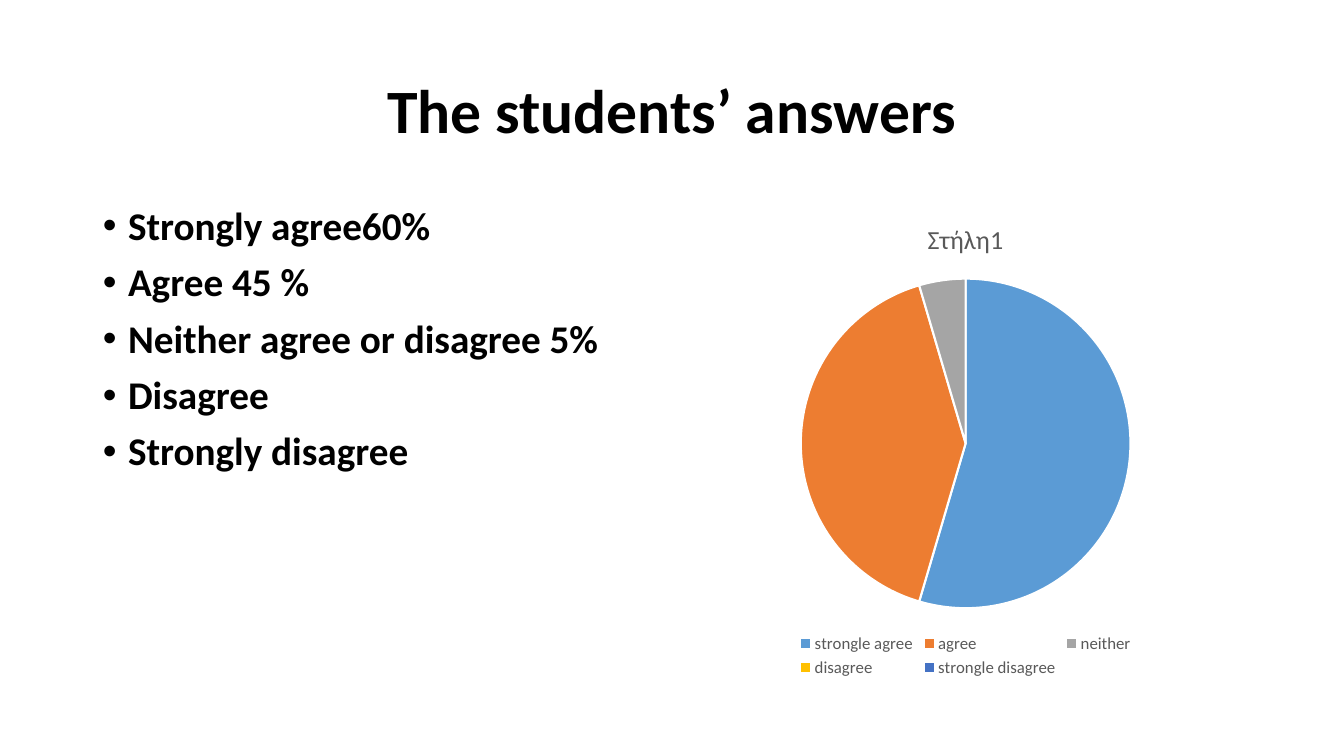
from lxml import etree
from pptx import Presentation
from pptx.chart.data import CategoryChartData
from pptx.dml.color import RGBColor
from pptx.enum.chart import XL_CHART_TYPE, XL_LEGEND_POSITION
from pptx.enum.text import MSO_ANCHOR, MSO_AUTO_SIZE, PP_ALIGN
from pptx.oxml.ns import qn
from pptx.util import Inches, Pt

PIE = XL_CHART_TYPE.PIE
BOTTOM = XL_LEGEND_POSITION.BOTTOM
MIDDLE, TOP = MSO_ANCHOR.MIDDLE, MSO_ANCHOR.TOP
NO_FIT = MSO_AUTO_SIZE.NONE
CENTER, LEFT = PP_ALIGN.CENTER, PP_ALIGN.LEFT

BLACK = RGBColor(0x00, 0x00, 0x00)
WHITE = RGBColor(0xFF, 0xFF, 0xFF)
GRAY = RGBColor(0x59, 0x59, 0x59)
SLICE_COLORS = [
    RGBColor(0x5B, 0x9B, 0xD5),
    RGBColor(0xED, 0x7D, 0x31),
    RGBColor(0xA5, 0xA5, 0xA5),
    RGBColor(0xFF, 0xC0, 0x00),
    RGBColor(0x44, 0x72, 0xC4),
]

ANSWERS = [
    "Strongly agree60%",
    "Agree 45 %",
    "Neither agree or disagree 5%",
    "Disagree",
    "Strongly disagree",
]
SHARES = {
    "strongle agree": 60,
    "agree": 45,
    "neither": 5,
    "disagree": None,
    "strongle disagree": None,
}


class AnswerSlide:
    font = "Calibri"
    margin = 0.92
    gap = 0.16
    indent = Inches(0.25)

    def __init__(self, prs):
        self.slide = prs.slides.add_slide(prs.slide_layouts[1])
        self.column = (prs.slide_width / Inches(1) - 2 * self.margin - self.gap) / 2

    def box(self, col, top, span, height):
        left = self.margin + col * (self.column + self.gap)
        width = span * self.column + (span - 1) * self.gap
        return [Inches(v) for v in (left, top, width, height)]

    def style(self, font, size, color, bold):
        font.name = self.font
        font.size = Pt(size)
        font.bold = bold
        font.color.rgb = color

    def fill_placeholder(self, sp, box, lines, size, align, anchor):
        sp.left, sp.top, sp.width, sp.height = box
        tf = sp.text_frame
        tf.text = "\n".join(lines)
        tf.word_wrap = True
        tf.auto_size = NO_FIT
        tf.vertical_anchor = anchor
        for i, p in enumerate(tf.paragraphs):
            p.alignment = align
            p.line_spacing = 0.9
            p.space_before = Pt(10 if i else 0)
            for r in p.runs:
                self.style(r.font, size, BLACK, True)
        return tf

    def title(self, text, box):
        self.fill_placeholder(self.slide.shapes.title, box, [text], 44, CENTER, MIDDLE)

    def bullets(self, lines, box):
        sp = self.slide.placeholders[1]
        tf = self.fill_placeholder(sp, box, lines, 28, LEFT, TOP)
        for p in tf.paragraphs:
            pPr = p._p.get_or_add_pPr()
            pPr.set("marL", str(self.indent))
            pPr.set("indent", str(-self.indent))
            etree.SubElement(pPr, qn("a:buFont")).set("typeface", "Arial")
            etree.SubElement(pPr, qn("a:buChar")).set("char", "•")

    def pie(self, name, shares, box):
        data = CategoryChartData()
        data.categories = list(shares)
        data.add_series(name, list(shares.values()))
        chart = self.slide.shapes.add_chart(PIE, *box, data).chart
        self.style(chart.font, 10, BLACK, False)
        chart.has_title = True
        tf = chart.chart_title.text_frame
        tf.text = name
        self.style(tf.paragraphs[0].runs[0].font, 18.6, GRAY, False)
        chart.has_legend = True
        chart.legend.position = BOTTOM
        chart.legend.include_in_layout = False
        self.style(chart.legend.font, 12, GRAY, False)
        plot = chart.plots[0]
        plot.vary_by_categories = True
        for i, color in enumerate(SLICE_COLORS):
            fmt = plot.series[0].points[i].format
            fmt.fill.solid()
            fmt.fill.fore_color.rgb = color
            fmt.line.color.rgb = WHITE
            fmt.line.width = Pt(1.5)


def main():
    prs = Presentation()
    prs.slide_width, prs.slide_height = Inches(13.33), Inches(7.5)
    s = AnswerSlide(prs)
    s.title("The students’ answers", s.box(0, 0.4, 2, 1.45))
    s.bullets(ANSWERS, s.box(0, 2, 1, 4.76))
    s.pie("Στήλη1", SHARES, s.box(1, 2, 1, 4.76))
    prs.save("out.pptx")


if __name__ == "__main__":
    main()
